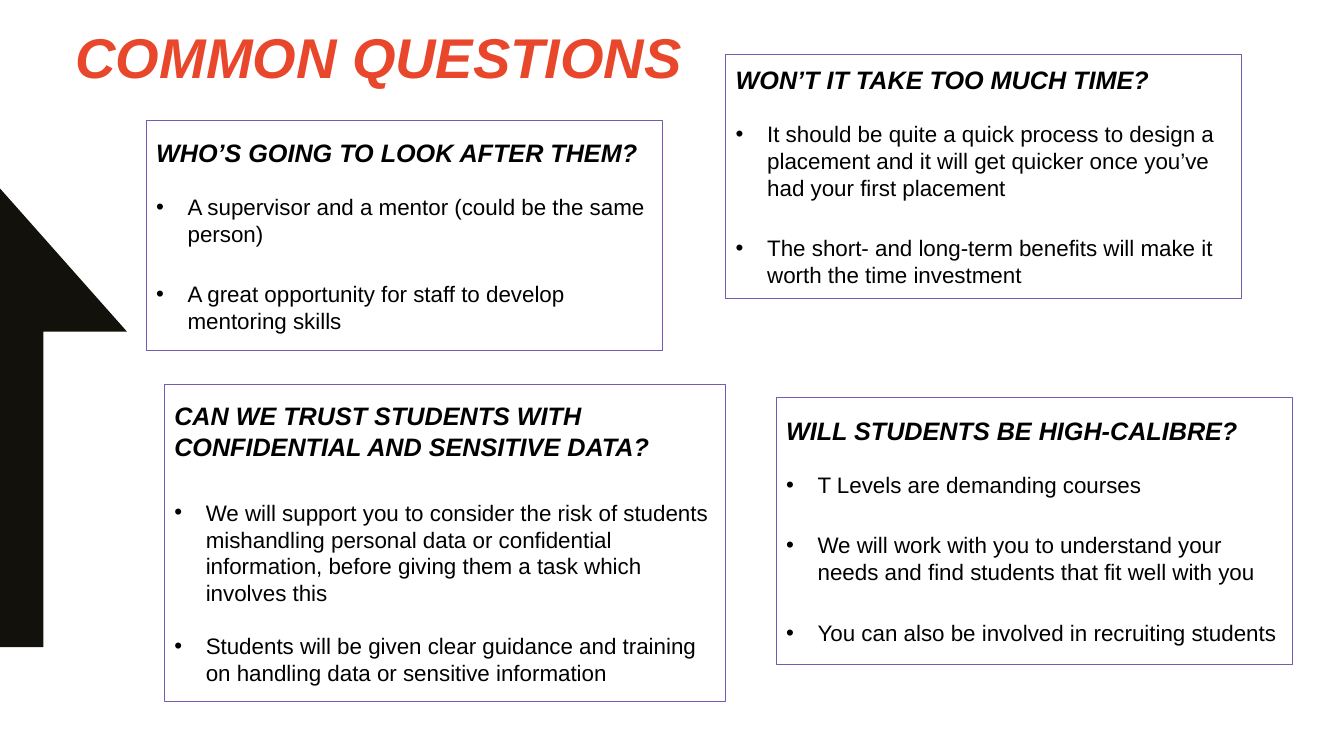
"""Build the Common Questions slide."""
from dataclasses import dataclass

from lxml import etree
from pptx import Presentation
from pptx.dml.color import RGBColor
from pptx.enum.shapes import MSO_SHAPE
from pptx.enum.text import MSO_ANCHOR, MSO_AUTO_SIZE, PP_ALIGN
from pptx.oxml.ns import qn
from pptx.util import Pt

RECT = MSO_SHAPE.RECTANGLE
LEFT = PP_ALIGN.LEFT
TOP, MIDDLE = MSO_ANCHOR.TOP, MSO_ANCHOR.MIDDLE
FIT_SHAPE = MSO_AUTO_SIZE.SHAPE_TO_FIT_TEXT
NO_FIT = MSO_AUTO_SIZE.NONE
TITLE_ONLY = 5


@dataclass(frozen=True)
class Theme:
    """Colours, font and type sizes of the slide."""
    font: str = "Arial"
    orange: RGBColor = RGBColor(0xE8, 0x47, 0x2B)
    purple: RGBColor = RGBColor(0x76, 0x5A, 0xB0)
    arrow: RGBColor = RGBColor(0x12, 0x11, 0x0C)
    black: RGBColor = RGBColor(0, 0, 0)
    title_size: float = 40
    heading_size: float = 18
    body_size: float = 16
    indent: float = 22.5


THEME = Theme()

ARROW = [(31, 236.9), (90.7, 236.9), (0, 134.6), (0, 462.2), (31, 462.2)]

QUESTIONS = [
    {"box": (104.4, 86.4, 368.6, 164.2),
     "heading": "WHO’S GOING TO LOOK AFTER THEM?",
     "answers": ["A supervisor and a mentor (could be the same person)",
                 "A great opportunity for staff to develop mentoring skills"]},
    {"box": (518.4, 38.9, 368.6, 174.2),
     "heading": "WON’T IT TAKE TOO MUCH TIME?",
     "answers": ["It should be quite a quick process to design a placement and "
                 "it will get quicker once you’ve had your first placement",
                 "The short- and long-term benefits will make it worth the "
                 "time investment"]},
    {"box": (554.4, 283.7, 368.6, 190.8),
     "heading": "WILL STUDENTS BE HIGH-CALIBRE?",
     "answers": ["T Levels are demanding courses",
                 "We will work with you to understand your needs and find "
                 "students that fit well with you",
                 "You can also be involved in recruiting students"]},
    {"box": (117.4, 275, 401, 226.1),
     "heading": "CAN WE TRUST STUDENTS WITH CONFIDENTIAL AND SENSITIVE DATA?",
     "answers": ["We will support you to consider the risk of students "
                 "mishandling personal data or confidential information, "
                 "before giving them a task which involves this",
                 "Students will be given clear guidance and training on "
                 "handling data or sensitive information"],
     "heading_gap": 27, "answer_gap": 18.4},
]


def apply_format(obj, values):
    """Set each attribute of an object from a dict."""
    for name, value in values.items():
        setattr(obj, name, value)


def write(p, text, size, color, strong):
    """Fill a left-aligned paragraph with one run."""
    p.alignment = LEFT
    r = p.add_run()
    r.text = text
    apply_format(r.font, {"name": THEME.font, "size": Pt(size),
                          "bold": strong, "italic": strong})
    r.font.color.rgb = color


def add_bullet(p):
    """Give a paragraph a hanging round bullet."""
    pPr = p._p.get_or_add_pPr()
    pPr.set("marL", str(Pt(THEME.indent)))
    pPr.set("indent", str(-Pt(THEME.indent)))
    etree.SubElement(pPr, qn("a:buFont")).set("typeface", THEME.font)
    etree.SubElement(pPr, qn("a:buChar")).set("char", "•")


def add_title(s, text, box):
    """Place and format the title placeholder."""
    sp = s.shapes.title
    apply_format(sp, dict(zip(("left", "top", "width", "height"),
                              map(Pt, box))))
    tf = sp.text_frame
    apply_format(tf, {"word_wrap": True, "auto_size": FIT_SHAPE,
                      "vertical_anchor": TOP})
    p = tf.paragraphs[0]
    apply_format(p, {"line_spacing": 1.0, "space_before": Pt(0)})
    write(p, text, THEME.title_size, THEME.orange, True)


def add_arrow(s, points):
    """Draw the filled arrow at the left edge."""
    start, *rest = [(Pt(x), Pt(y)) for x, y in points]
    builder = s.shapes.build_freeform(*start)
    builder.add_line_segments(rest, close=True)
    sp = builder.convert_to_shape()
    sp.shadow.inherit = False
    sp.fill.solid()
    sp.fill.fore_color.rgb = THEME.arrow
    sp.line.fill.background()


def add_question(s, box, heading, answers, heading_gap=18, answer_gap=24):
    """Draw an outlined box with a heading and bulleted answers."""
    sp = s.shapes.add_shape(RECT, *map(Pt, box))
    sp.shadow.inherit = False
    sp.fill.background()
    sp.line.color.rgb = THEME.purple
    sp.line.width = Pt(0.75)
    tf = sp.text_frame
    apply_format(tf, {"word_wrap": True, "auto_size": NO_FIT,
                      "vertical_anchor": MIDDLE})
    write(tf.paragraphs[0], heading, THEME.heading_size, THEME.black, True)
    for i, answer in enumerate(answers):
        p = tf.add_paragraph()
        add_bullet(p)
        p.space_before = Pt(answer_gap if i else heading_gap)
        write(p, answer, THEME.body_size, THEME.black, False)


def main():
    """Build and save the slide."""
    prs = Presentation()
    apply_format(prs, {"slide_width": Pt(960), "slide_height": Pt(540)})
    s = prs.slides.add_slide(prs.slide_layouts[TITLE_ONLY])
    add_arrow(s, ARROW)
    add_title(s, "COMMON QUESTIONS", (46.8, 12.2, 475.2, 55.4))
    for question in QUESTIONS:
        add_question(s, **question)
    prs.save("out.pptx")


if __name__ == "__main__":
    main()
